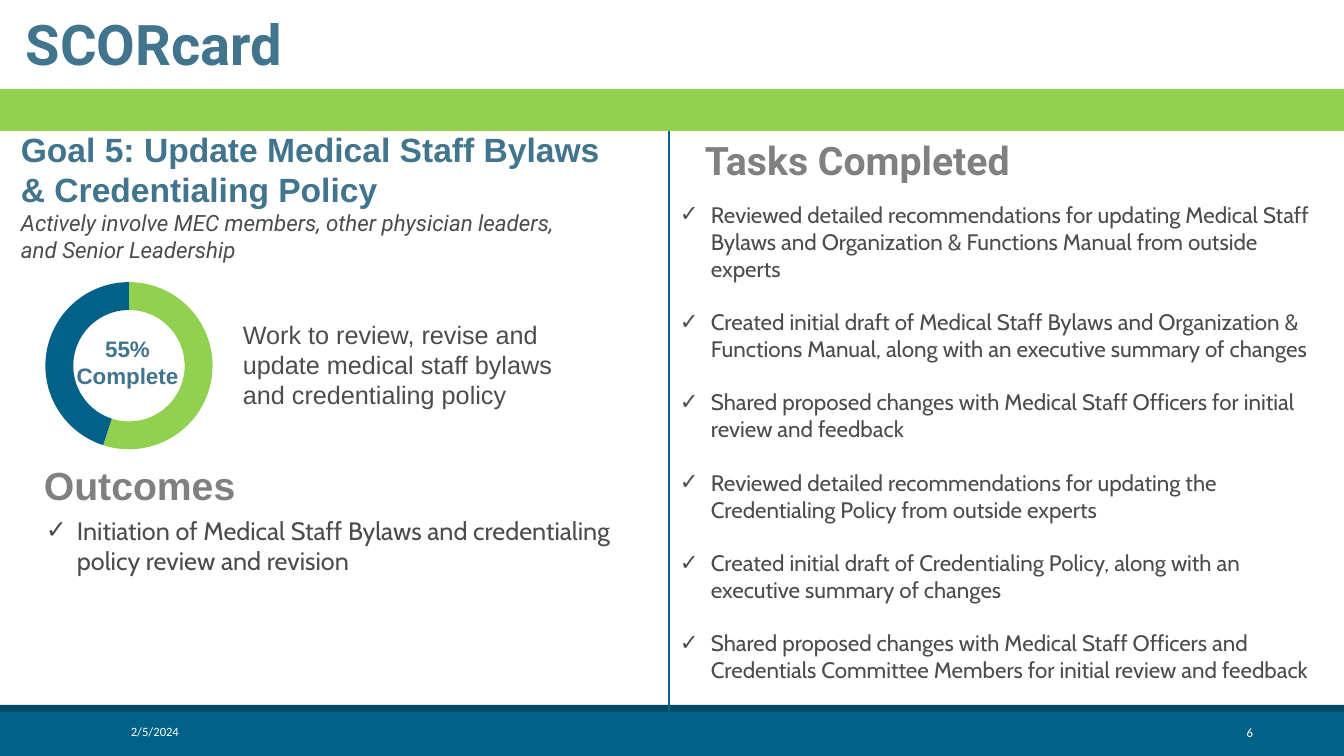
from lxml import etree
from pptx import Presentation, util as u
from pptx.chart.data import CategoryChartData
from pptx.dml.color import RGBColor
from pptx.enum import chart as ch, shapes, text
from pptx.oxml import parse_xml
from pptx.oxml.ns import nsdecls, qn

SLIDE_SIZE = (1344, 756)
EMU_PER_PX = 12192000 / 1344
HANGING = 31
COLORS = {
    "blue": "016188", "navy": "014A67", "green": "92D050", "steel": "41748D",
    "gray": "808080", "body": "4C4C4C", "white": "FFFFFF",
    "inner1": "767676", "inner2": "BABABA", "spare1": "969696", "spare2": "535353",
}
FORMATS = {
    "title": {"name": "Roboto", "size": 40, "color": "steel", "bold": True},
    "goal": {"name": "Arial", "size": 24, "color": "steel", "bold": True},
    "approach": {"name": "Roboto", "size": 16, "color": "body", "italic": True},
    "work": {"name": "Arial", "size": 18, "color": "body"},
    "progress": {"name": "Arial", "size": 16, "color": "steel", "bold": True},
    "outcomes_head": {"name": "Arial", "size": 28, "color": "gray", "bold": True},
    "outcomes": {"name": "Cabin", "size": 18, "color": "body"},
    "tasks_head": {"name": "Roboto", "size": 28, "color": "gray", "bold": True},
    "tasks": {"name": "Cabin", "size": 16, "color": "body"},
    "footer": {"name": "Calibri", "size": 9, "color": "white"},
    "chart": {"name": "Calibri", "size": 10, "color": "body"},
}
OUTCOMES = ["Initiation of Medical Staff Bylaws and credentialing policy review and revision"]
TASKS = [
    "Reviewed detailed recommendations for updating Medical Staff Bylaws and "
    "Organization & Functions Manual from outside experts",
    "Created initial draft of Medical Staff Bylaws and Organization & Functions "
    "Manual, along with an executive summary of changes",
    "Shared proposed changes with Medical Staff Officers for initial review and feedback",
    "Reviewed detailed recommendations for updating the Credentialing Policy from outside experts",
    "Created initial draft of Credentialing Policy, along with an executive summary of changes",
    "Shared proposed changes with Medical Staff Officers and Credentials Committee "
    "Members for initial review and feedback",
]
RINGS = [
    ("Series 1", (0, 0, None, None), ("inner1", "inner2", "spare1", "spare2")),
    ("Series 2", (55, 45, None, None), ("green", "blue", "spare1", "spare2")),
]
PLOT_LAYOUT = {"x": 0.06, "y": 0.1, "w": 0.88, "h": 0.92}


def px(length):
    return u.Emu(round(length * EMU_PER_PX))


def rgb(color):
    return RGBColor.from_string(COLORS[color])


def style_font(font, style):
    for attribute, value in FORMATS[style].items():
        if attribute == "color":
            font.color.rgb = rgb(value)
        else:
            setattr(font, attribute, u.Pt(value) if attribute == "size" else value)


def add_check(paragraph):
    """Give the paragraph a hanging check mark."""
    properties = paragraph._p.get_or_add_pPr()
    properties.set("marL", str(px(HANGING)))
    properties.set("indent", str(-px(HANGING)))
    etree.SubElement(properties, qn("a:buFont"), typeface="Arial")
    etree.SubElement(properties, qn("a:buChar"), char="✓")


def add_band(slide, box, color):
    band = slide.shapes.add_shape(shapes.MSO_SHAPE.RECTANGLE, *map(px, box))
    band.shadow.inherit = False
    band.fill.solid()
    band.fill.fore_color.rgb = rgb(color)
    band.line.fill.background()


def add_text(slide, box, lines, style, align="LEFT", anchor="TOP",
             wrap=True, checks=False, gap=0):
    frame = slide.shapes.add_textbox(*map(px, box)).text_frame
    frame.word_wrap = wrap
    frame.vertical_anchor = text.MSO_ANCHOR[anchor]
    for index, line in enumerate(lines):
        paragraph = frame.add_paragraph() if index else frame.paragraphs[0]
        paragraph.text = line
        paragraph.alignment = text.PP_ALIGN[align]
        if index and gap:
            paragraph.space_before = u.Pt(gap)
        if checks:
            add_check(paragraph)
        style_font(paragraph.font, style)
        style_font(paragraph.runs[0].font, style)


def add_divider(slide, x, bottom, top):
    divider = slide.shapes.add_connector(
        shapes.MSO_CONNECTOR.STRAIGHT, *map(px, (x, bottom, x, top)))
    divider.line.color.rgb = rgb("blue")
    divider.line.width = u.Pt(1)
    etree.SubElement(divider._element.spPr, qn("a:effectLst"))


def place_plot(chart):
    """Fix the inner plot area as fractions of the chart."""
    area = chart._chartSpace.chart.plotArea
    for layout in area.findall(qn("c:layout")):
        area.remove(layout)
    places = "".join(f'<c:{key} val="{value}"/>' for key, value in PLOT_LAYOUT.items())
    area.insert(0, parse_xml(
        f'<c:layout {nsdecls("c")}><c:manualLayout><c:layoutTarget val="inner"/>'
        f'<c:xMode val="edge"/><c:yMode val="edge"/>{places}'
        '</c:manualLayout></c:layout>'))


def add_progress_ring(slide, box):
    data = CategoryChartData()
    data.categories = ["1", "2", "3", "4"]
    for name, values, _ in RINGS:
        data.add_series(name, values)
    chart = slide.shapes.add_chart(
        ch.XL_CHART_TYPE.DOUGHNUT, *map(px, box), data).chart
    chart.has_legend = False
    chart.has_title = False
    style_font(chart.font, "chart")
    plot = chart.plots[0]
    plot.has_data_labels = False
    for series, (_, _, colors) in zip(plot.series, RINGS):
        for index, color in enumerate(colors):
            fill = series.points[index].format.fill
            fill.solid()
            fill.fore_color.rgb = rgb(color)
    place_plot(chart)


def main():
    deck = Presentation()
    deck.slide_width, deck.slide_height = map(px, SLIDE_SIZE)
    slide = deck.slides.add_slide(deck.slide_layouts[6])

    add_band(slide, (0, 712, 1344, 44), "blue")
    add_band(slide, (0, 705, 1344, 7), "navy")
    add_text(slide, (1060, 720, 203, 25), ["6"], "footer", align="RIGHT", anchor="MIDDLE")
    add_text(slide, (121, 712, 272, 40), ["2/5/2024"], "footer", anchor="MIDDLE")
    add_band(slide, (0, 89, 1344, 42), "green")
    add_text(slide, (16, 5, 280, 78), ["SCORcard"], "title", wrap=False)

    add_text(slide, (233, 314, 373, 102),
             ["Work to review, revise and update medical staff bylaws and credentialing policy"],
             "work")
    add_text(slide, (11, 204, 578, 65),
             ["Actively involve MEC members, other physician leaders, and Senior Leadership"],
             "approach")
    add_text(slide, (11, 124, 624, 92),
             ["Goal 5: Update Medical Staff Bylaws & Credentialing Policy"], "goal")

    add_text(slide, (670, 196, 658, 559), TASKS, "tasks", checks=True, gap=19)
    add_text(slide, (695, 131, 420, 57), ["Tasks Completed"], "tasks_head")
    add_text(slide, (36, 510, 628, 129), OUTCOMES, "outcomes", checks=True)
    add_text(slide, (34, 456, 522, 57), ["Outcomes"], "outcomes_head")
    add_divider(slide, 669, 712, 131)

    add_progress_ring(slide, (34, 261, 190, 194))
    add_text(slide, (57, 330, 141, 65), ["55%", "Complete"], "progress",
             align="CENTER", anchor="MIDDLE")
    deck.save("out.pptx")


if __name__ == "__main__":
    main()
